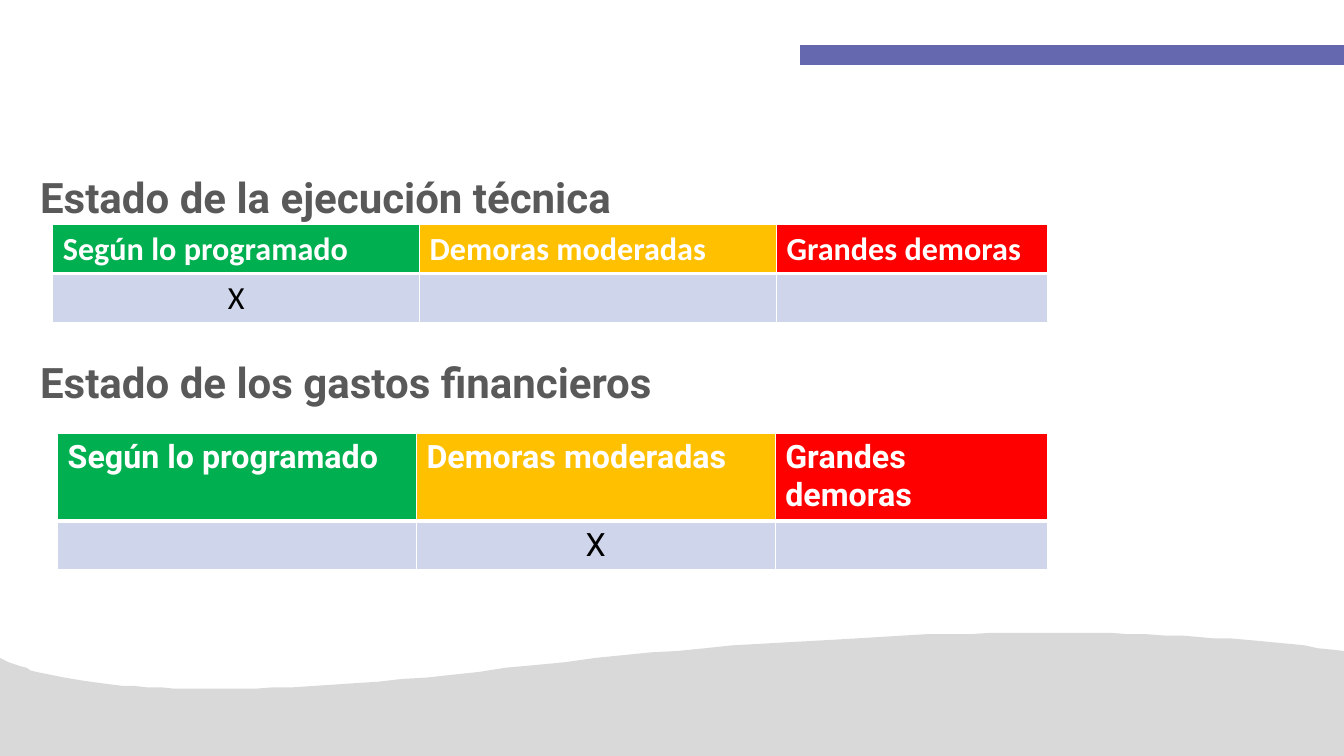
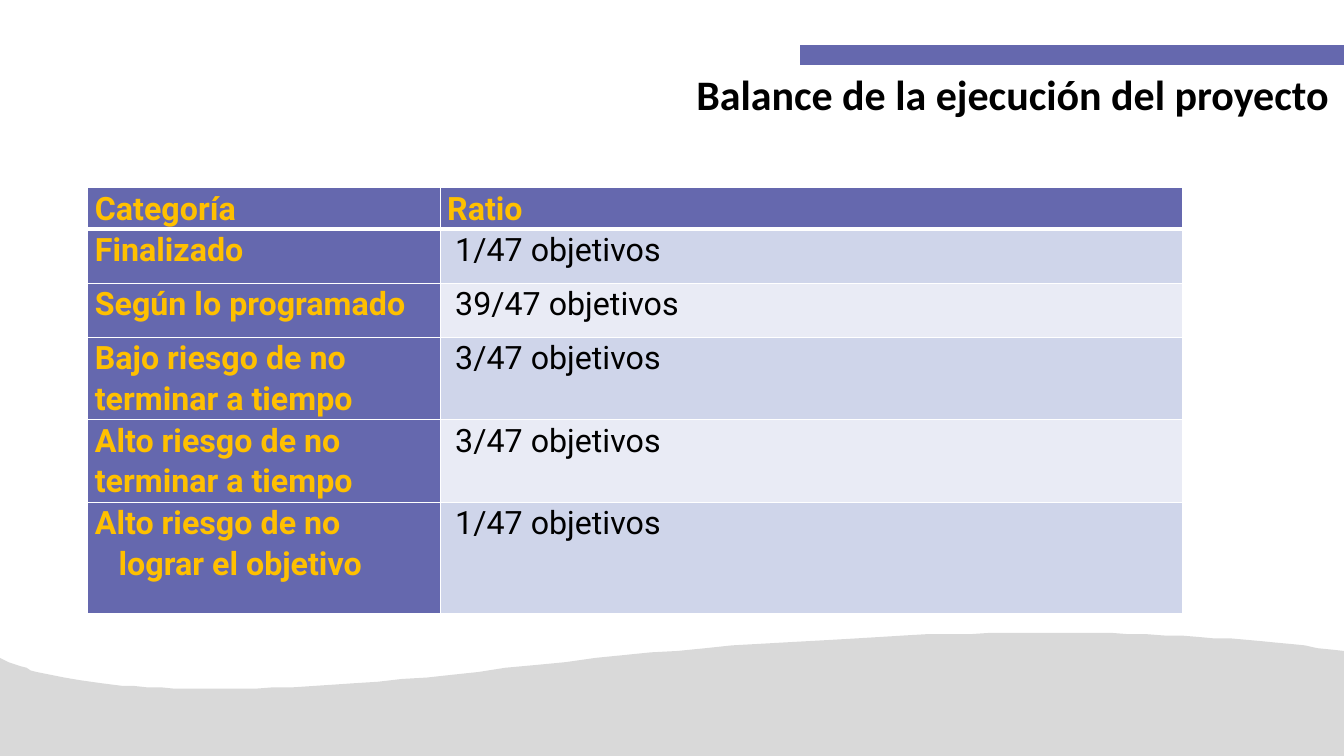
from lxml import etree
from pptx import Presentation, util as u
from pptx.dml.color import RGBColor
from pptx.enum import shapes, text
from pptx.oxml import ns

COLORS = {
    "white": "FFFFFF", "black": "000000", "heading": "595959",
    "wave": "D9D9D9", "purple": "6568AE", "green": "00B050",
    "amber": "FFC000", "red": "FF0000", "band": "CFD5EA", "pale": "E9EBF5",
}
WIDTH, HEIGHT = 960, 540
WAVE = [
    [(960, 465.1), (838.8, 447.8), (649.4, 443.5), (361.4, 477.4)],
    [(361.4, 477.4), (95.8, 509), (18.7, 481), (-1.4, 468.7)],
]


def curve_points(controls, steps=40):
    points = []
    for step in range(1, steps + 1):
        t = step / steps
        weights = ((1 - t) ** 3, 3 * t * (1 - t) ** 2, 3 * t ** 2 * (1 - t), t ** 3)
        points.append(tuple(
            sum(weight * point[axis] for weight, point in zip(weights, controls))
            for axis in (0, 1)))
    return points


class Deck:
    text_size = 23
    title_size = 30

    def __init__(self):
        self.presentation = Presentation()
        self.presentation.slide_width = u.Pt(WIDTH)
        self.presentation.slide_height = u.Pt(HEIGHT)
        self.slide = None

    def color(self, name):
        return RGBColor.from_string(COLORS[name])

    def new_slide(self):
        self.slide = self.presentation.slides.add_slide(self.presentation.slide_layouts[6])
        self.wave()
        self.bar()

    def paint(self, shape, color):
        shape.shadow.inherit = False
        shape.fill.solid()
        shape.fill.fore_color.rgb = self.color(color)
        shape.line.fill.background()

    def wave(self):
        builder = self.slide.shapes.build_freeform(WIDTH, HEIGHT, scale=u.Pt(1))
        points = [WAVE[0][0]]
        for controls in WAVE:
            points += curve_points(controls)
        builder.add_line_segments(points + [(-1.4, HEIGHT)], close=True)
        self.paint(builder.convert_to_shape(), "wave")

    def bar(self):
        shape = self.slide.shapes.add_shape(
            shapes.MSO_SHAPE.RECTANGLE, u.Pt(571.5), u.Pt(32.2), u.Pt(388.5), u.Pt(14.2))
        self.paint(shape, "purple")

    def style(self, paragraph, size, font, color, bold=True):
        paragraph.font.size = u.Pt(size)
        paragraph.font.name = font
        paragraph.font.bold = bold
        paragraph.font.color.rgb = self.color(color)

    def text_box(self, left, top, width, height):
        box = self.slide.shapes.add_textbox(u.Pt(left), u.Pt(top), u.Pt(width), u.Pt(height))
        box.text_frame.word_wrap = True
        return box.text_frame

    def title(self, wording):
        frame = self.text_box(490.3, 45.4, 469.7, 44)
        frame.margin_right = 0
        frame.text = wording
        self.style(frame.paragraphs[0], self.title_size, "Calibri", "black")

    def headings(self, wordings, gap):
        frame = self.text_box(21.6, 115.2, 875, 329)
        frame.text = "\n".join(wordings)
        for index, paragraph in enumerate(frame.paragraphs):
            paragraph.line_spacing = u.Pt(40)
            if index:
                paragraph.space_before = u.Pt(gap)
            self.style(paragraph, self.title_size, "Roboto", "heading")

    def table(self, left, top, widths, heights):
        frame = self.slide.shapes.add_table(
            len(heights), len(widths), u.Pt(left), u.Pt(top),
            u.Pt(sum(widths)), u.Pt(sum(heights)))
        table = frame.table
        for column, width in zip(table.columns, widths):
            column.width = u.Pt(width)
        for row, height in zip(table.rows, heights):
            row.height = u.Pt(height)
        return table

    def cell(self, cell, wording, fill, font, color, bold, header):
        properties = cell._tc.get_or_add_tcPr()
        for side in "LRTB":
            line_width = 3 if header and side == "B" else 1
            line = etree.SubElement(
                properties, ns.qn("a:ln" + side), w=str(u.Pt(line_width)))
            solid = etree.SubElement(line, ns.qn("a:solidFill"))
            etree.SubElement(solid, ns.qn("a:srgbClr"), val=COLORS["white"])
        cell.fill.solid()
        cell.fill.fore_color.rgb = self.color(fill)
        cell.text = wording
        paragraph = cell.text_frame.paragraphs[0]
        self.style(paragraph, self.text_size, font, color, bold)
        return paragraph

    def status_table(self, left, top, widths, font, marked):
        table = self.table(left, top, widths, [29.5, 29.5])
        statuses = [("Según lo programado", "green"),
                    ("Demoras moderadas", "amber"), ("Grandes demoras", "red")]
        for index, (status, fill) in enumerate(statuses):
            self.cell(table.cell(0, index), status, fill, font, "white", True, True)
            mark = "X" if index == marked else ""
            paragraph = self.cell(
                table.cell(1, index), mark, "band", font, "black", False, False)
            paragraph.alignment = text.PP_ALIGN.CENTER

    def ratio_table(self, left, top, widths, heights, rows):
        table = self.table(left, top, widths, heights)
        for row_index, row in enumerate(rows):
            header = row_index == 0
            for column_index, wording in enumerate(row):
                label = header or column_index == 0
                fill = "purple" if label else "band" if row_index % 2 else "pale"
                cell = table.cell(row_index, column_index)
                paragraph = self.cell(cell, wording, fill, "Roboto",
                                      "amber" if label else "black", label, header)
                paragraph.line_spacing = 1.07
                cell.margin_top = cell.margin_bottom = 0
                cell.margin_left = u.Pt(5 if label else 10.7)
                cell.margin_right = u.Pt(5)
                if "\v" in wording:
                    indent = paragraph._p.get_or_add_pPr()
                    indent.set("marL", str(u.Pt(17)))
                    indent.set("indent", str(-u.Pt(17)))


def main():
    deck = Deck()

    deck.new_slide()
    deck.headings(["Estado de la ejecución técnica",
                   "Estado de los gastos financieros"], gap=92)
    deck.status_table(37.7, 160.6, [262, 255, 193.5], "Calibri", marked=0)
    deck.status_table(41.2, 309.8, [256.3, 256.3, 194.5], "Roboto", marked=1)

    deck.new_slide()
    deck.ratio_table(62.8, 134.1, [251.7, 530], [28.8, 38.6, 38.6, 57.2, 57.2, 79.2], [
        ("Categoría", "Ratio"),
        ("Finalizado", "1/47 objetivos"),
        ("Según lo programado", "39/47 objetivos"),
        ("Bajo riesgo de no terminar a tiempo", "3/47 objetivos"),
        ("Alto riesgo de no terminar a tiempo", "3/47 objetivos"),
        ("Alto riesgo de no\vlograr el objetivo", "1/47 objetivos"),
    ])
    deck.title("Balance de la ejecución del proyecto")

    deck.presentation.save("out.pptx")


if __name__ == "__main__":
    main()
